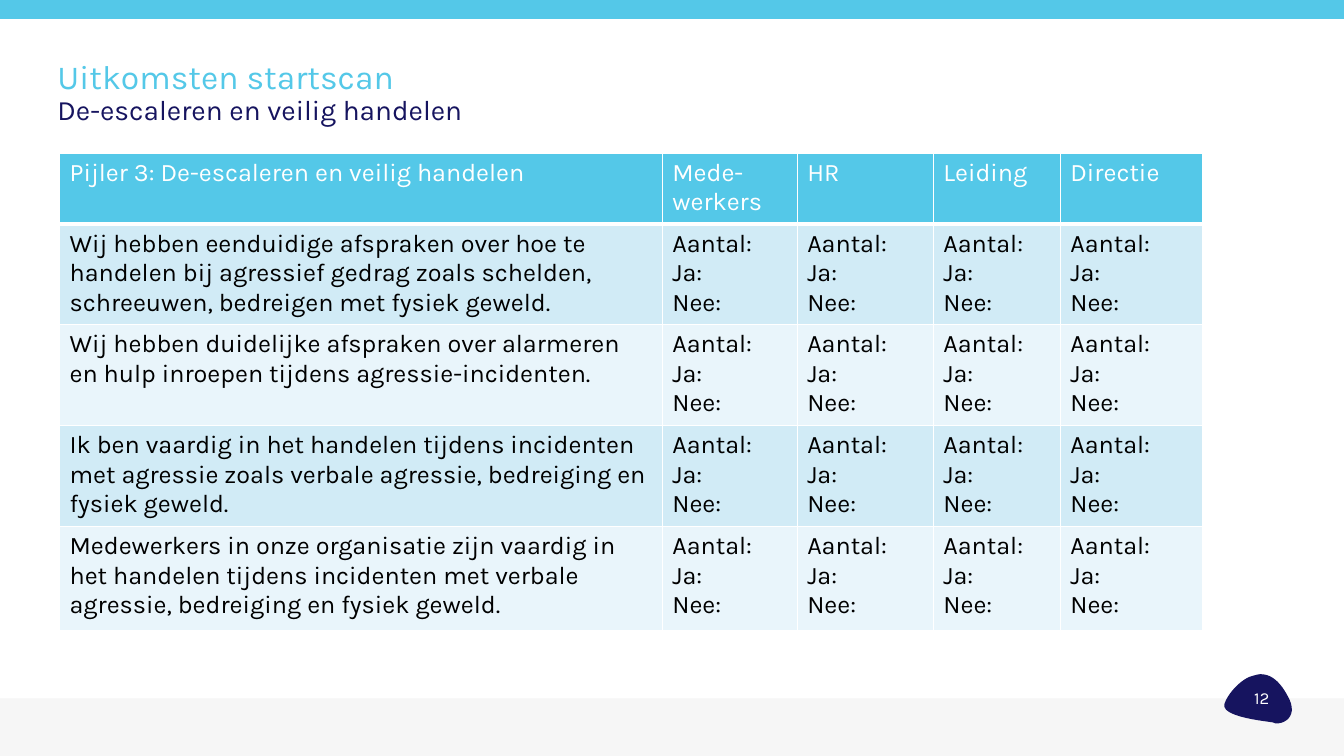
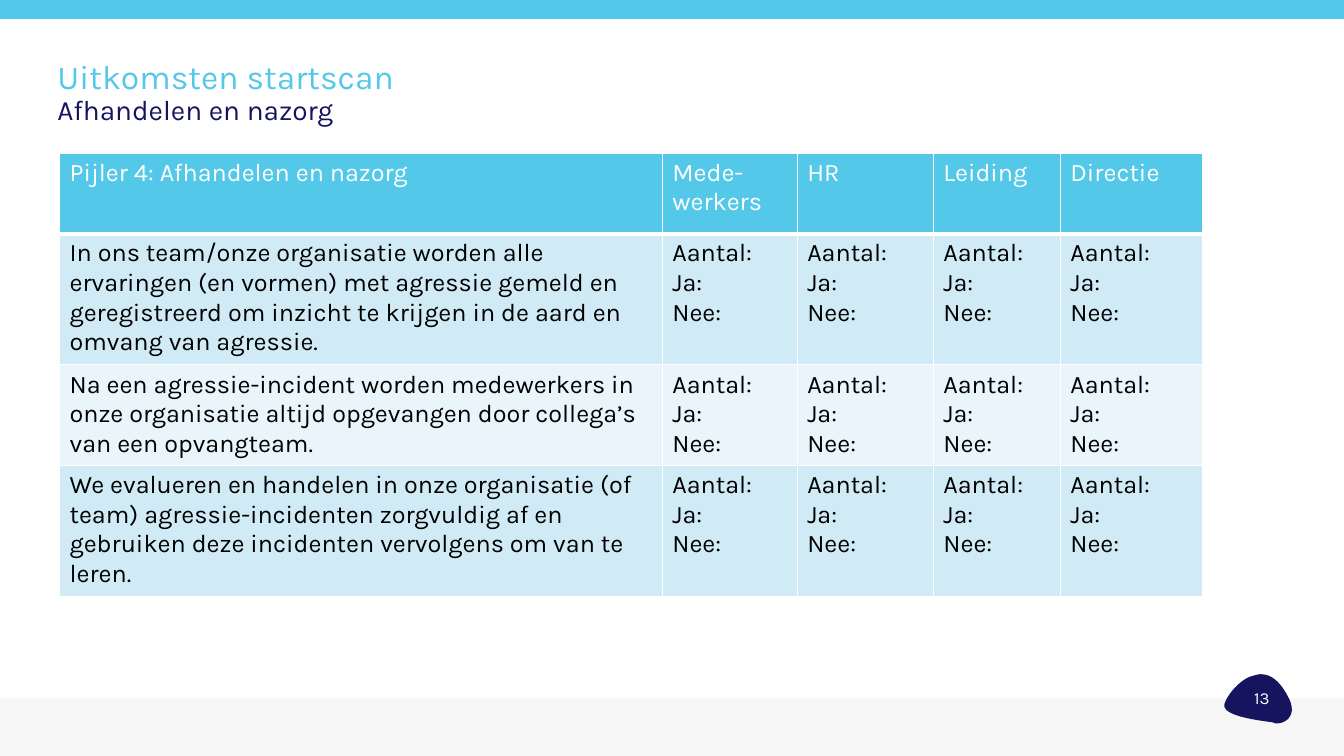
from lxml import etree
from pptx import Presentation
from pptx.dml.color import RGBColor
from pptx.enum.shapes import MSO_SHAPE
from pptx.enum.text import MSO_ANCHOR, PP_ALIGN
from pptx.oxml.ns import qn
from pptx.util import Cm, Pt

RECT = MSO_SHAPE.RECTANGLE
MIDDLE = MSO_ANCHOR.MIDDLE
CENTER = PP_ALIGN.CENTER

SKY = RGBColor(0x54, 0xC8, 0xE8)
NAVY = RGBColor(0x16, 0x14, 0x5F)
GREY = RGBColor(0xF4, 0xF4, 0xF4)
WHITE = RGBColor(0xFF, 0xFF, 0xFF)
BLACK = RGBColor(0, 0, 0)
STRIPES = (RGBColor(0xD1, 0xEB, 0xF6), RGBColor(0xE9, 0xF5, 0xFB))
FONT = "Karla"

WIDTH, HEIGHT = 33.87, 19.05
COLS = (15.19, 3.4, 3.43, 3.2, 3.58)
GROUPS = ("Mede-\nwerkers", "HR", "Leiding", "Directie")
COUNT = "Aantal:\nJa:\nNee:"
STEPS = 12
BLOB_START = (1.04, 0)
BLOB = (
    ((0.97, 0), (0.89, 0.03), (0.81, 0.05)),
    ((0.61, 0.1), (0.25, 0.41), (0.13, 0.74)),
    ((0, 1.09), (1.27, 1.19), (1.37, 1.22)),
    ((1.4, 1.24), (1.42, 1.24), (1.45, 1.24)),
    ((1.68, 1.24), (2.01, 1.02), (1.7, 0.51)),
    ((1.47, 0.1), (1.24, 0), BLOB_START),
)

SLIDES = (
    (12, "De-escaleren en veilig handelen", "Pijler 3: De-escaleren en veilig handelen",
     (1.73, 2.49, 2.49, 2.49, 2.64), (
         "Wij hebben eenduidige afspraken over hoe te handelen bij agressief gedrag "
         "zoals schelden, schreeuwen, bedreigen met fysiek geweld.",
         "Wij hebben duidelijke afspraken over alarmeren en hulp inroepen tijdens "
         "agressie-incidenten.",
         "Ik ben vaardig in het handelen tijdens incidenten met agressie zoals verbale "
         "agressie, bedreiging en fysiek geweld.",
         "Medewerkers in onze organisatie zijn vaardig in het handelen tijdens incidenten "
         "met verbale agressie, bedreiging en fysiek geweld.")),
    (13, "Afhandelen en nazorg", "Pijler 4: Afhandelen en nazorg",
     (2.03, 3.22, 2.49, 3.22), (
         "In ons team/onze organisatie worden alle ervaringen (en vormen) met agressie "
         "gemeld en geregistreerd om inzicht te krijgen in de aard en omvang van agressie.",
         "Na een agressie-incident worden medewerkers in onze organisatie altijd opgevangen "
         "door collega’s van een opvangteam.",
         "We evalueren en handelen in onze organisatie (of team) agressie-incidenten "
         "zorgvuldig af en gebruiken deze incidenten vervolgens om van te leren.")),
)


def style(font, size, color):
    font.name = FONT
    font.size = Pt(size)
    font.color.rgb = color
    font.bold = False


def paint(shape, color):
    shape.shadow.inherit = False
    shape.fill.solid()
    shape.fill.fore_color.rgb = color
    shape.line.fill.background()


def add_band(slide, top, height, color):
    band = slide.shapes.add_shape(RECT, 0, Cm(top), Cm(WIDTH), Cm(height))
    paint(band, color)
    return band


def add_text(slide, left, top, width, height):
    box = slide.shapes.add_textbox(Cm(left), Cm(top), Cm(width), Cm(height))
    frame = box.text_frame
    frame.word_wrap = True
    frame.vertical_anchor = MIDDLE
    frame.margin_left = frame.margin_right = frame.margin_top = frame.margin_bottom = 0
    return frame.paragraphs[0]


def trace(start, curves):
    for one, two, end in curves:
        for step in range(1, STEPS + 1):
            t = step / STEPS
            u = 1 - t
            yield tuple(u**3 * a + 3 * u * u * t * b + 3 * u * t * t * c + t**3 * d
                        for a, b, c, d in zip(start, one, two, end))
        start = end


def add_badge(slide, left, top, number):
    def place(point):
        return Cm(left + point[0]), Cm(top + point[1])

    pen = slide.shapes.build_freeform(*place(BLOB_START))
    pen.add_line_segments([place(point) for point in trace(BLOB_START, BLOB)])
    paint(pen.convert_to_shape(), NAVY)
    para = add_text(slide, left + 0.46, top + 0.08, 1.22, 1.04)
    para.text = str(number)
    para.alignment = CENTER
    style(para.font, 12, WHITE)


def add_frame(slide, number):
    foot = add_band(slide, 17.6, HEIGHT - 17.6, GREY)
    color = foot.fill._xPr.find(qn("a:solidFill"))[0]
    etree.SubElement(color, qn("a:alpha"), val="80000")
    add_badge(slide, 30.73, 16.99, number)
    add_band(slide, 0, 0.48, SKY)


def add_title(slide, left, top, title, topic):
    para = add_text(slide, left, top, 30.91, 2.06)
    para.line_spacing = 0.9
    run = para.add_run()
    run.text = title
    style(run.font, 24, SKY)
    para.add_line_break()
    run = para.add_run()
    run.text = topic
    style(run.font, 20, NAVY)


def set_edges(cell, base):
    props = cell._tc.get_or_add_tcPr()
    for tag, width in (("lnL", 1), ("lnR", 1), ("lnT", 1), ("lnB", base)):
        edge = etree.SubElement(props, qn("a:" + tag), w=str(Pt(width)))
        fill = etree.SubElement(edge, qn("a:solidFill"))
        etree.SubElement(fill, qn("a:srgbClr"), val=str(WHITE))


def fill_cell(cell, text, back, ink, base):
    set_edges(cell, base)
    cell.fill.solid()
    cell.fill.fore_color.rgb = back
    cell.text_frame.text = text
    for para in cell.text_frame.paragraphs:
        style(para.font, 18, ink)


def add_grid(slide, left, top, head, heights, claims):
    rows = [(head, *GROUPS)] + [(claim,) + (COUNT,) * len(GROUPS) for claim in claims]
    grid = slide.shapes.add_table(len(rows), len(COLS), Cm(left), Cm(top),
                                  Cm(sum(COLS)), Cm(sum(heights))).table
    for col, width in zip(grid.columns, COLS):
        col.width = Cm(width)
    for i, (texts, height) in enumerate(zip(rows, heights)):
        grid.rows[i].height = Cm(height)
        look = (STRIPES[(i - 1) % 2], BLACK, 1) if i else (SKY, WHITE, 3)
        for j, text in enumerate(texts):
            fill_cell(grid.cell(i, j), text, *look)


def add_scan(deck, number, topic, head, heights, claims):
    slide = deck.slides.add_slide(deck.slide_layouts[6])
    add_frame(slide, number)
    add_grid(slide, 1.5, 3.86, head, heights, claims)
    add_title(slide, 1.45, 1.32, "Uitkomsten startscan", topic)


def main():
    deck = Presentation()
    deck.slide_width = Cm(WIDTH)
    deck.slide_height = Cm(HEIGHT)
    for scan in SLIDES:
        add_scan(deck, *scan)
    deck.save("out.pptx")


if __name__ == "__main__":
    main()
